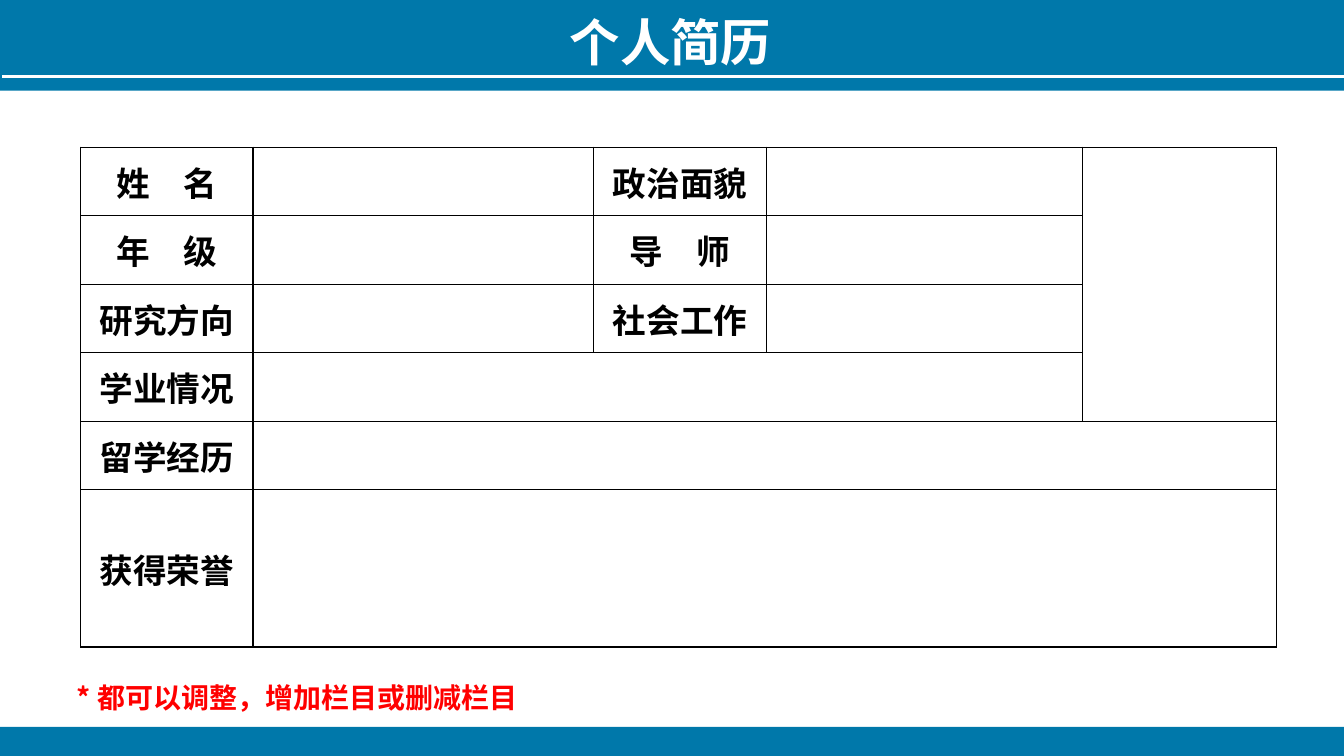
from lxml import etree
from pptx import Presentation
from pptx.dml.color import RGBColor
from pptx.enum.shapes import MSO_CONNECTOR, MSO_SHAPE
from pptx.enum.text import MSO_ANCHOR, MSO_AUTO_SIZE, PP_ALIGN
from pptx.oxml.ns import qn
from pptx.util import Inches, Pt

CENTER, LEFT = PP_ALIGN.CENTER, PP_ALIGN.LEFT
MIDDLE = MSO_ANCHOR.MIDDLE
NO_AUTOFIT = MSO_AUTO_SIZE.NONE
RECTANGLE, STRAIGHT = MSO_SHAPE.RECTANGLE, MSO_CONNECTOR.STRAIGHT

COLORS = {"blue": "0078AA", "white": "FFFFFF", "black": "000000", "red": "FF0000"}
CJK_FONT = "Noto Sans CJK SC"
LATIN_FONT = "Times New Roman"

WIDTH, HEIGHT = 13.33, 7.5
TITLE = "个人简历"
NOTE = "* 都可以调整，增加栏目或删减栏目"
HEADER_HEIGHT, FOOTER_HEIGHT = 0.9, 0.29
BANDS = [(0, HEADER_HEIGHT), (HEIGHT - FOOTER_HEIGHT, FOOTER_HEIGHT)]
RULE_Y = 0.76
TABLE_LEFT, TABLE_TOP = 0.8, 1.46
COLUMN_WIDTHS = [1.71, 3.38, 1.71, 3.14, 1.92]
ROW_HEIGHTS = [0.68] * 5 + [1.56]
LABELS = {
    0: ["姓　名", "年　级", "研究方向", "学业情况", "留学经历", "获得荣誉"],
    2: ["政治面貌", "导　师", "社会工作"],
}
MERGES = [((0, 4), (3, 4)), ((3, 1), (3, 3)), ((4, 1), (4, 4)), ((5, 1), (5, 4))]


def color(name):
    return RGBColor.from_string(COLORS[name])


def write(frame, text, size, tint, align, latin=CJK_FONT):
    para = frame.paragraphs[0]
    para.alignment = align
    span = para.add_run()
    span.text = text
    span.font.color.rgb = color(tint)
    for name, value in {"name": latin, "size": Pt(size), "bold": True}.items():
        setattr(span.font, name, value)
    east_asian = etree.SubElement(span.font._element, qn("a:ea"))
    east_asian.set("typeface", CJK_FONT)


def format_box(box, left, top, width, height):
    place = {"left": left, "top": top, "width": width, "height": height}
    for name, value in place.items():
        setattr(box, name, Inches(value))
    settings = {"word_wrap": True, "auto_size": NO_AUTOFIT, "vertical_anchor": MIDDLE}
    for name, value in settings.items():
        setattr(box.text_frame, name, value)


def add_borders(cell):
    properties = cell._tc.get_or_add_tcPr()
    for index, side in enumerate(("lnL", "lnR", "lnT", "lnB")):
        border = etree.Element(qn("a:" + side), w=str(Pt(1)))
        fill = etree.SubElement(border, qn("a:solidFill"))
        etree.SubElement(fill, qn("a:srgbClr"), val=COLORS["black"])
        properties.insert(index, border)


def add_bands(page):
    for top, height in BANDS:
        band = page.shapes.add_shape(
            RECTANGLE, 0, Inches(top), Inches(WIDTH), Inches(height))
        band.shadow.inherit = False
        band.fill.solid()
        band.fill.fore_color.rgb = color("blue")
        band.line.fill.background()
    rule = page.shapes.add_connector(
        STRAIGHT, Inches(0.02), Inches(RULE_Y), Inches(WIDTH), Inches(RULE_Y))
    rule.line.color.rgb = color("white")
    rule.line.width = Pt(2.25)
    etree.SubElement(rule._element.spPr, qn("a:effectLst"))


def add_resume_table(page):
    table = page.shapes.add_table(
        len(ROW_HEIGHTS), len(COLUMN_WIDTHS), Inches(TABLE_LEFT), Inches(TABLE_TOP),
        Inches(sum(COLUMN_WIDTHS)), Inches(sum(ROW_HEIGHTS))).table
    table.first_row = table.horz_banding = False
    for column, width in zip(table.columns, COLUMN_WIDTHS):
        column.width = Inches(width)
    for row, height in zip(table.rows, ROW_HEIGHTS):
        row.height = Inches(height)
    for cell in table.iter_cells():
        cell.fill.background()
        cell.vertical_anchor = MIDDLE
        add_borders(cell)
    for first, last in MERGES:
        table.cell(*first).merge(table.cell(*last))
    for column, labels in LABELS.items():
        for row, label in enumerate(labels):
            write(table.cell(row, column).text_frame, label, 24, "black", CENTER, LATIN_FONT)


def main():
    deck = Presentation()
    deck.slide_width, deck.slide_height = Inches(WIDTH), Inches(HEIGHT)
    page = deck.slides.add_slide(deck.slide_layouts[5])
    add_bands(page)

    title = page.shapes.title
    page.shapes._spTree.append(title._element)
    format_box(title, -0.03, 0.06, 13.36, 0.71)
    write(title.text_frame, TITLE, 36, "white", CENTER)

    add_resume_table(page)

    note = page.shapes.add_textbox(0, 0, 0, 0)
    format_box(note, 0.66, 6.7, 11.34, 0.44)
    write(note.text_frame, NOTE, 20, "red", LEFT)
    deck.save("out.pptx")


if __name__ == "__main__":
    main()
